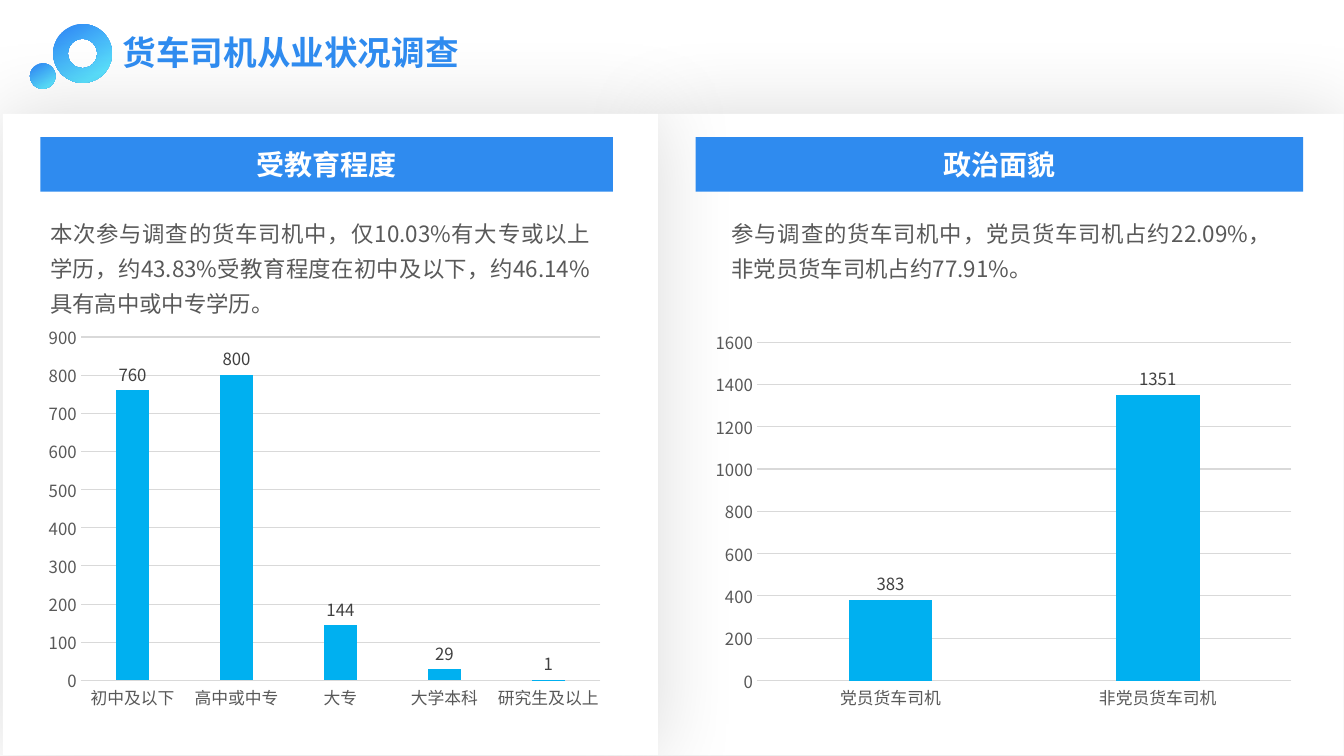
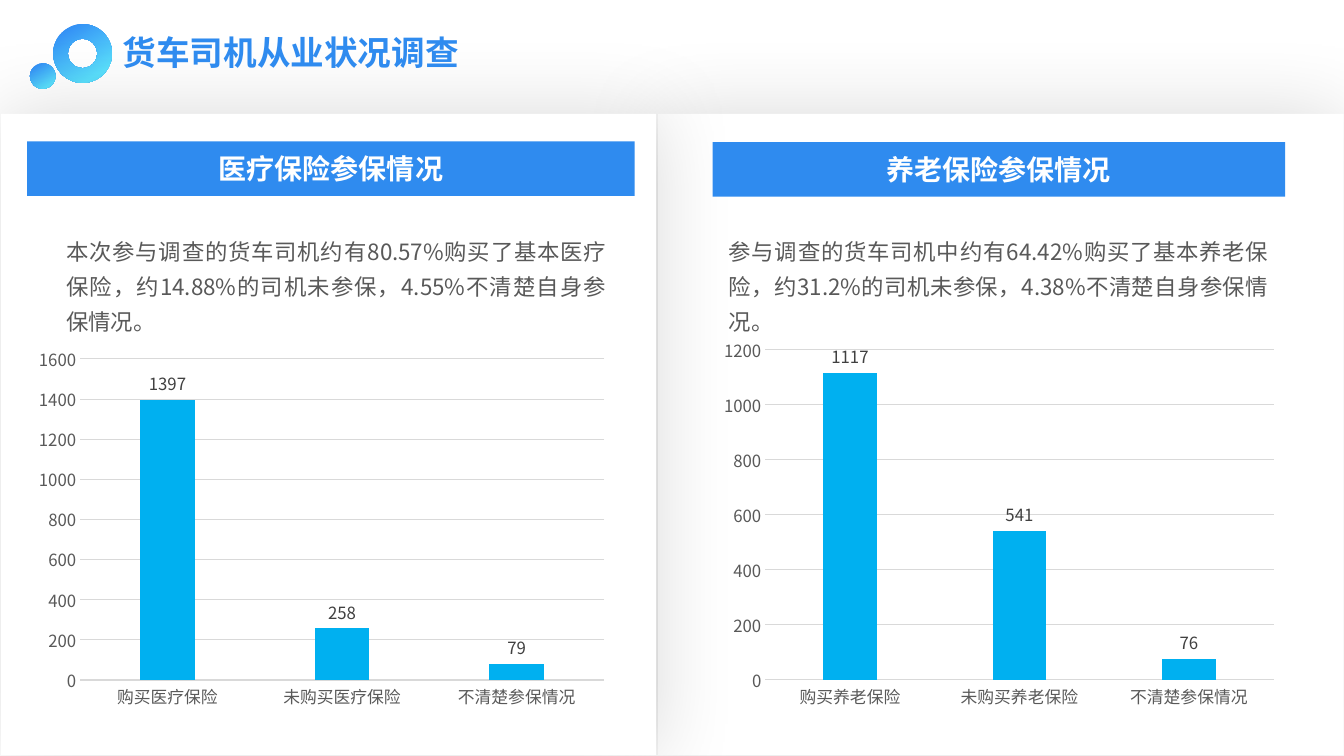
import pptx
import pptx.chart.data
import pptx.dml.color
import pptx.enum.chart
import pptx.enum.shapes
import pptx.enum.text
import pptx.oxml
import pptx.oxml.ns
import pptx.util
from lxml import etree

Pt = pptx.util.Pt
SHAPES = pptx.enum.shapes.MSO_SHAPE
ALIGN = pptx.enum.text.PP_ALIGN

# Content: each slide has a left and a right panel
TITLE = "货车司机从业状况调查"
SLIDES = [
    {
        "left_panel_x": 2,
        "panels": [
            {
                "heading": "受教育程度", "heading_box": (28.8, 98, 409, 39),
                "summary": "本次参与调查的货车司机中，仅10.03%有大专或以上学历，"
                           "约43.83%受教育程度在初中及以下，约46.14%具有高中或中专学历。",
                "summary_at": (28.8, 147.6),
                "chart_box": (26.6, 226, 410.4, 286.6), "scale": (900, 100),
                "counts": {"初中及以下": 760, "高中或中专": 800, "大专": 144,
                           "大学本科": 29, "研究生及以上": 1},
            },
            {
                "heading": "政治面貌", "heading_box": (496.8, 98, 434, 39),
                "summary": "参与调查的货车司机中，党员货车司机占约22.09%，"
                           "非党员货车司机占约77.91%。",
                "summary_at": (515.5, 147.6),
                "chart_box": (502.6, 229.7, 428.4, 283), "scale": (1600, 200),
                "counts": {"党员货车司机": 383, "非党员货车司机": 1351},
            },
        ],
    },
    {
        "left_panel_x": 0.7,
        "panels": [
            {
                "heading": "医疗保险参保情况", "heading_box": (19.4, 101, 434, 39),
                "summary": "本次参与调查的货车司机约有80.57%购买了基本医疗保险，"
                           "约14.88%的司机未参保，4.55%不清楚自身参保情况。",
                "summary_at": (40.3, 160.6),
                "chart_box": (19.4, 242, 420.5, 270), "scale": (1600, 200),
                "counts": {"购买医疗保险": 1397, "未购买医疗保险": 258,
                           "不清楚参保情况": 79},
            },
            {
                "heading": "养老保险参保情况", "heading_box": (509, 101.5, 409, 39),
                "summary": "参与调查的货车司机中约有64.42%购买了基本养老保险，"
                           "约31.2%的司机未参保，4.38%不清楚自身参保情况。",
                "summary_at": (513.4, 160.6),
                "chart_box": (509, 235.4, 409, 276.5), "scale": (1200, 200),
                "counts": {"购买养老保险": 1117, "未购买养老保险": 541,
                           "不清楚参保情况": 76},
            },
        ],
    },
]


# Shared look
class Theme:
    font = "Noto Sans CJK SC"
    blue, bar, white = "2F8BEF", "00B0F0", "FFFFFF"
    body, label, rule, base = "595959", "404040", "D9D9D9", "000000"
    gradient = ((0.12, "338FF5"), (0.82, "5ADFFC"))
    title_size, heading_size, body_size = 24, 20, 16
    axis_size, chart_size = 12, 10
    line_pitch, rule_width = 25, 0.75


SLIDE_SIZE = (960, 540)
PANEL_TOP, PANEL_HEIGHT = 81.4, 458
LEFT_WIDTH, RIGHT_X, RIGHT_WIDTH = 468, 470.2, 489.6
SUMMARY_SIZE = (399.6, 79.2)
TITLE_BOX = (80.6, 19.4, 265.7, 36)
RINGS = [(SHAPES.DONUT, (38, 17.2, 42, 42)), (SHAPES.OVAL, (21.4, 45.2, 18.2, 18.2))]
PANEL_SHADOW = (
    '<a:effectLst xmlns:a="http://schemas.openxmlformats.org/drawingml/2006/main">'
    '<a:outerShdw blurRad="762000" dist="0" dir="0" algn="ctr" rotWithShape="0">'
    '<a:srgbClr val="000000"><a:alpha val="15000"/></a:srgbClr>'
    '</a:outerShdw></a:effectLst>')


def rgb(value):
    return pptx.dml.color.RGBColor.from_string(value)


def points(box):
    return [Pt(length) for length in box]


def set_font(font, size, color, bold=False):
    font.size, font.bold, font.name = Pt(size), bold, Theme.font
    font.color.rgb = rgb(color)
    # East Asian typeface
    east_asian = etree.SubElement(font._element, pptx.oxml.ns.qn("a:ea"))
    east_asian.set("typeface", Theme.font)


def add_block(slide, kind, box, color=None):
    block = slide.shapes.add_shape(kind, *points(box))
    block.shadow.inherit = False
    block.line.fill.background()
    if color:
        block.fill.solid()
        block.fill.fore_color.rgb = rgb(color)
    return block


def add_panel(slide, x, width):
    panel = add_block(slide, SHAPES.RECTANGLE, (x, PANEL_TOP, width, PANEL_HEIGHT), Theme.white)
    properties = panel._element.spPr
    properties.remove(properties.find(pptx.oxml.ns.qn("a:effectLst")))
    properties.append(pptx.oxml.parse_xml(PANEL_SHADOW))


def add_rings(slide):
    for kind, box in RINGS:
        ring = add_block(slide, kind, box)
        ring.fill.gradient()
        ring.fill.gradient_angle = 300
        for stop, (position, color) in zip(ring.fill.gradient_stops, Theme.gradient):
            stop.position = position
            stop.color.rgb = rgb(color)


def write(frame, text, align, size, color, bold=False):
    frame.word_wrap = True
    paragraph = frame.paragraphs[0]
    paragraph.text = text
    paragraph.alignment = align
    set_font(paragraph.runs[0].font, size, color, bold)
    return paragraph


def add_text(slide, box, text, size, color, bold=False):
    frame = slide.shapes.add_textbox(*points(box)).text_frame
    frame.auto_size = pptx.enum.text.MSO_AUTO_SIZE.SHAPE_TO_FIT_TEXT
    return write(frame, text, ALIGN.JUSTIFY, size, color, bold)


def set_rule(line):
    line.color.rgb = rgb(Theme.rule)
    line.width = Pt(Theme.rule_width)


def add_counts_chart(slide, box, counts, scale):
    enums = pptx.enum.chart
    data = pptx.chart.data.CategoryChartData()
    data.categories = list(counts)
    data.add_series("Series 1", list(counts.values()))
    chart = slide.shapes.add_chart(
        enums.XL_CHART_TYPE.COLUMN_CLUSTERED, *points(box), data).chart
    chart.has_legend = chart.has_title = False
    set_font(chart.font, Theme.chart_size, Theme.base)

    # Columns and their values
    plot = chart.plots[0]
    plot.gap_width, plot.overlap, plot.vary_by_categories = 219, -27, False
    columns = plot.series[0].format.fill
    columns.solid()
    columns.fore_color.rgb = rgb(Theme.bar)
    plot.has_data_labels = True
    labels = plot.data_labels
    labels.show_value = True
    labels.position = enums.XL_LABEL_POSITION.OUTSIDE_END
    set_font(labels.font, Theme.axis_size, Theme.label)

    # Axes
    for axis in (chart.category_axis, chart.value_axis):
        axis.major_tick_mark = axis.minor_tick_mark = enums.XL_TICK_MARK.NONE
        set_font(axis.tick_labels.font, Theme.axis_size, Theme.body)
    set_rule(chart.category_axis.format.line)
    values = chart.value_axis
    values.format.line.fill.background()
    values.has_major_gridlines = True
    set_rule(values.major_gridlines.format.line)
    values.minimum_scale = 0
    values.maximum_scale, values.major_unit = scale


def add_topic(slide, topic):
    heading = add_block(slide, SHAPES.RECTANGLE, topic["heading_box"], Theme.blue)
    heading.text_frame.vertical_anchor = pptx.enum.text.MSO_ANCHOR.MIDDLE
    write(heading.text_frame, topic["heading"], ALIGN.CENTER,
          Theme.heading_size, Theme.white, True)
    summary = add_text(slide, topic["summary_at"] + SUMMARY_SIZE, topic["summary"],
                       Theme.body_size, Theme.body)
    summary.line_spacing = Pt(Theme.line_pitch)
    add_counts_chart(slide, topic["chart_box"], topic["counts"], topic["scale"])


def main():
    deck = pptx.Presentation()
    deck.slide_width, deck.slide_height = points(SLIDE_SIZE)
    for content in SLIDES:
        slide = deck.slides.add_slide(deck.slide_layouts[6])
        add_panel(slide, RIGHT_X, RIGHT_WIDTH)
        add_rings(slide)
        add_panel(slide, content["left_panel_x"], LEFT_WIDTH)
        add_text(slide, TITLE_BOX, TITLE, Theme.title_size, Theme.blue, True)
        for topic in content["panels"]:
            add_topic(slide, topic)
    deck.save("out.pptx")


if __name__ == "__main__":
    main()
